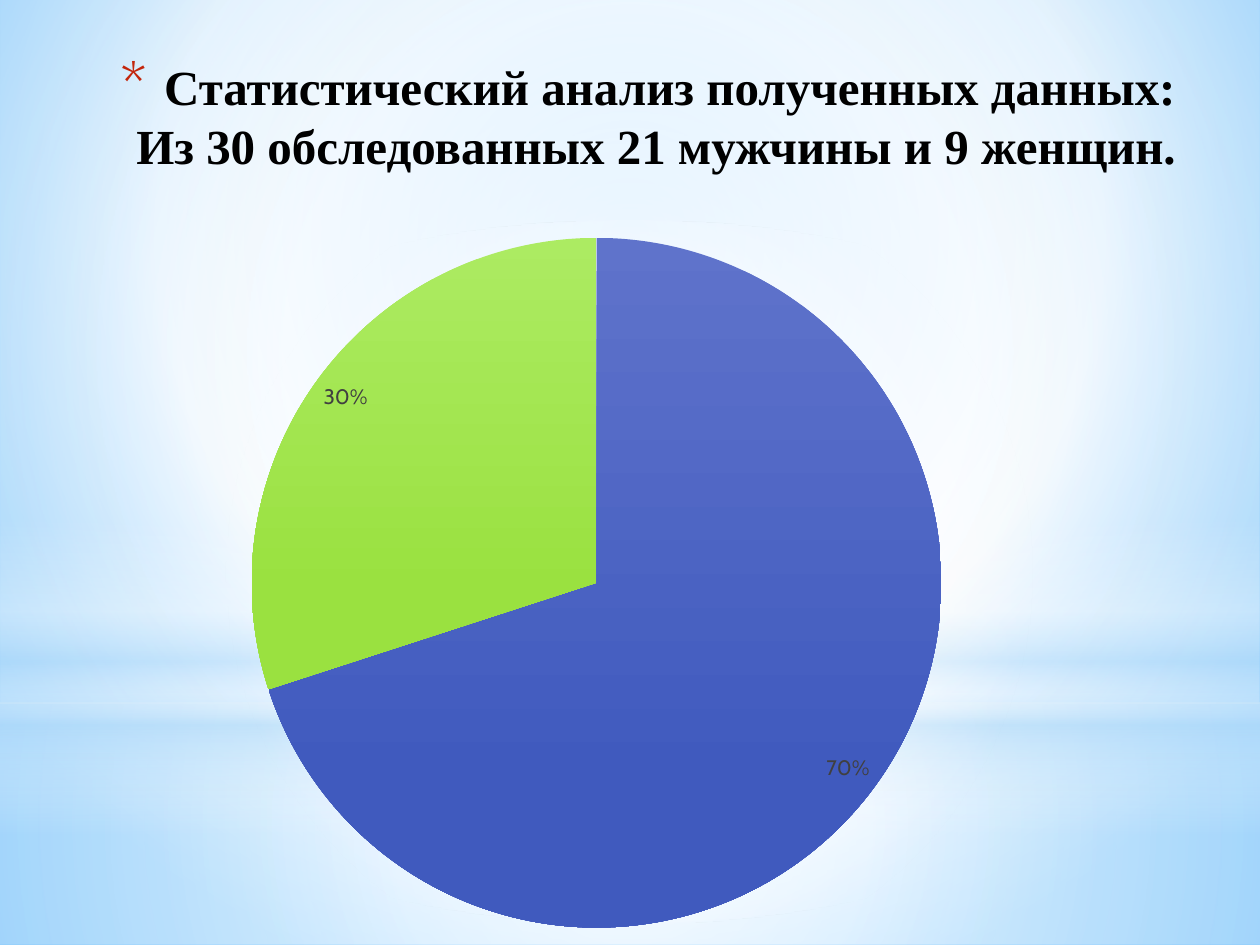
import copy
from dataclasses import dataclass
from typing import Any, Optional

import pptx
import pptx.chart.data
import pptx.dml.color
import pptx.enum.chart
import pptx.enum.shapes
import pptx.enum.text
import pptx.oxml
import pptx.oxml.ns
import pptx.util

qn = pptx.oxml.ns.qn
Inches = pptx.util.Inches
Pt = pptx.util.Pt
Color = pptx.dml.color.RGBColor
Kind = pptx.enum.shapes.MSO_SHAPE
WIDE, HIGH = 10, 7.5


@dataclass(frozen=True)
class Theme:
    ink: str = "000000"
    label: str = "404040"
    star: str = "C3260C"
    white: str = "FFFFFF"
    pale: str = "B4DCFA"
    sky: str = "9ED5FF"
    deep: str = "5BB9FF"
    serif: str = "Times New Roman"
    sans: str = "Cabin"
    head: int = 28
    small: int = 12
    base: int = 10


@dataclass(frozen=True)
class Grad:
    """Stops are (place %, colour, opacity %); focus is left, top, right, bottom %."""
    stops: tuple[tuple[int, str, int], ...]
    focus: Optional[tuple[int, int, int, int]] = None


@dataclass(frozen=True)
class Panel:
    """A full-width band; top and height are shares of the slide's height."""
    kind: Any
    top: float
    high: float
    grad: Grad


@dataclass(frozen=True)
class Slice:
    name: str
    value: Optional[int]
    light: str
    dark: str


T = Theme()
MID = (50, 50, 50, 50)
BACK = Grad(((0, T.sky, 100), (60, T.white, 100), (100, T.deep, 100)), (20, 10, 20, 60))
SPLIT = 0.744
PANELS = (
    Panel(Kind.RECTANGLE, SPLIT, 1 - SPLIT,
          Grad(((0, T.white, 91), (37, T.white, 76), (100, T.pale, 79)), MID)),
    Panel(Kind.RECTANGLE, 0, SPLIT,
          Grad(((0, T.white, 89), (48, T.white, 62), (100, T.pale, 79)), MID)),
    Panel(Kind.RECTANGLE, 0.55, 1 / 3,
          Grad(((0, T.white, 0), (29, T.white, 30), (45, T.pale, 40),
                (55, T.white, 26), (65, T.pale, 60), (100, T.white, 0)))),
    Panel(Kind.OVAL, 0.233, SPLIT,
          Grad(((0, T.white, 100), (56, T.white, 0)), MID)),
)
SLICES = (
    Slice("1", 70, "5F73CB", "405ABE"),
    Slice("2", None, "6BCEF3", "4AC0EB"),
    Slice("3", 30, "ACEB62", "9AE140"),
)
LINES = (
    "Статистический анализ полученных данных:",
    "Из 30 обследованных 21 мужчины и 9 женщин.",
)


def node(tag: str, inner: str = "", **attrs: Any) -> Any:
    words = "".join(f' {key}="{val}"' for key, val in attrs.items())
    space = pptx.oxml.ns.nsdecls("a")
    return pptx.oxml.parse_xml(f"<a:{tag} {space}{words}>{inner}</a:{tag}>")


def shade(fill: Any, owner: Any, grad: Grad) -> None:
    """Give a fill a gradient; owner is an element holding no other solid fill."""
    fill.solid()
    fill.fore_color.rgb = Color.from_string(T.white)
    stops = "".join(
        f'<a:gs pos="{place * 1000}"><a:srgbClr val="{color}">'
        f'<a:alpha val="{alpha * 1000}"/></a:srgbClr></a:gs>'
        for place, color, alpha in grad.stops)
    if grad.focus:
        edges = " ".join(f'{side}="{val * 1000}"' for side, val in zip("ltrb", grad.focus))
        course = f'<a:path path="circle"><a:fillToRect {edges}/></a:path>'
    else:
        course = '<a:lin ang="5400000" scaled="0"/>'
    plain = next(owner.iter(qn("a:solidFill")))
    plain.getparent().replace(
        plain, node("gradFill", f"<a:gsLst>{stops}</a:gsLst>{course}", rotWithShape=1))


def dress(font: Any, name: str, size: int, color: str) -> None:
    font.name, font.size = name, Pt(size)
    font.color.rgb = Color.from_string(color)


def add_panel(slide: Any, panel: Panel) -> None:
    shape = slide.shapes.add_shape(
        panel.kind, 0, Inches(panel.top * HIGH), Inches(WIDE), Inches(panel.high * HIGH))
    shape.shadow.inherit = False
    shape.line.fill.background()
    shade(shape.fill, shape.element, panel.grad)


def set_title(slide: Any) -> None:
    title = slide.shapes.title
    title.left, title.top = Inches(0.21), Inches(0.36)
    title.width, title.height = Inches(9.22), Inches(1.53)
    frame = title.text_frame
    frame.word_wrap = True
    frame.auto_size = pptx.enum.text.MSO_AUTO_SIZE.NONE
    frame.vertical_anchor = pptx.enum.text.MSO_ANCHOR.TOP
    frame.margin_top = Inches(0.09)
    para = frame.paragraphs[0]
    para.alignment = pptx.enum.text.PP_ALIGN.RIGHT
    props = para._p.get_or_add_pPr()
    props.set("marL", str(Inches(0.35)))
    props.set("indent", str(Inches(-0.35)))
    props.append(node("buClr", f'<a:srgbClr val="{T.star}"/>'))
    props.append(node("buSzPct", val=128000))
    props.append(node("buFont", typeface=T.sans))
    props.append(node("buChar", char="*"))
    for row, line in enumerate(LINES):
        if row:
            para.add_line_break()
        run = para.add_run()
        run.text = line
        run.font.bold = True
        dress(run.font, T.serif, T.head, T.ink)
    for gap in para._p.findall(qn("a:br")):
        gap.insert(0, copy.deepcopy(run.font._element))
    # The title stands in front of the panels.
    title.element.getparent().append(title.element)


def add_pie(slide: Any) -> None:
    data = pptx.chart.data.CategoryChartData()
    data.categories = [part.name for part in SLICES]
    data.add_series("Series 1", [part.value for part in SLICES])
    chart = slide.shapes.add_chart(
        pptx.enum.chart.XL_CHART_TYPE.PIE, Inches(0.01), Inches(1.75),
        Inches(9.45), Inches(5.75), data).chart
    chart.has_title = chart.has_legend = False
    plot = chart.plots[0]
    plot.vary_by_categories = True
    for at, part in enumerate(SLICES):
        look = plot.series[0].points[at].format
        shade(look.fill, chart.element,
              Grad(((0, part.light, 100), (78, part.dark, 100))))
        look.line.fill.background()
    dress(chart.font, T.sans, T.base, T.ink)
    plot.has_data_labels = True
    labels = plot.data_labels
    labels.show_percentage, labels.show_value = True, False
    labels.number_format, labels.number_format_is_linked = "0%", False
    labels.position = pptx.enum.chart.XL_LABEL_POSITION.INSIDE_END
    dress(labels.font, T.sans, T.small, T.label)


def main() -> None:
    deck = pptx.Presentation()
    deck.slide_width, deck.slide_height = Inches(WIDE), Inches(HIGH)
    slide = deck.slides.add_slide(deck.slide_layouts.get_by_name("Title Only"))
    shade(slide.background.fill, slide.element, BACK)
    for panel in PANELS:
        add_panel(slide, panel)
    set_title(slide)
    add_pie(slide)
    deck.save("out.pptx")


if __name__ == "__main__":
    main()
